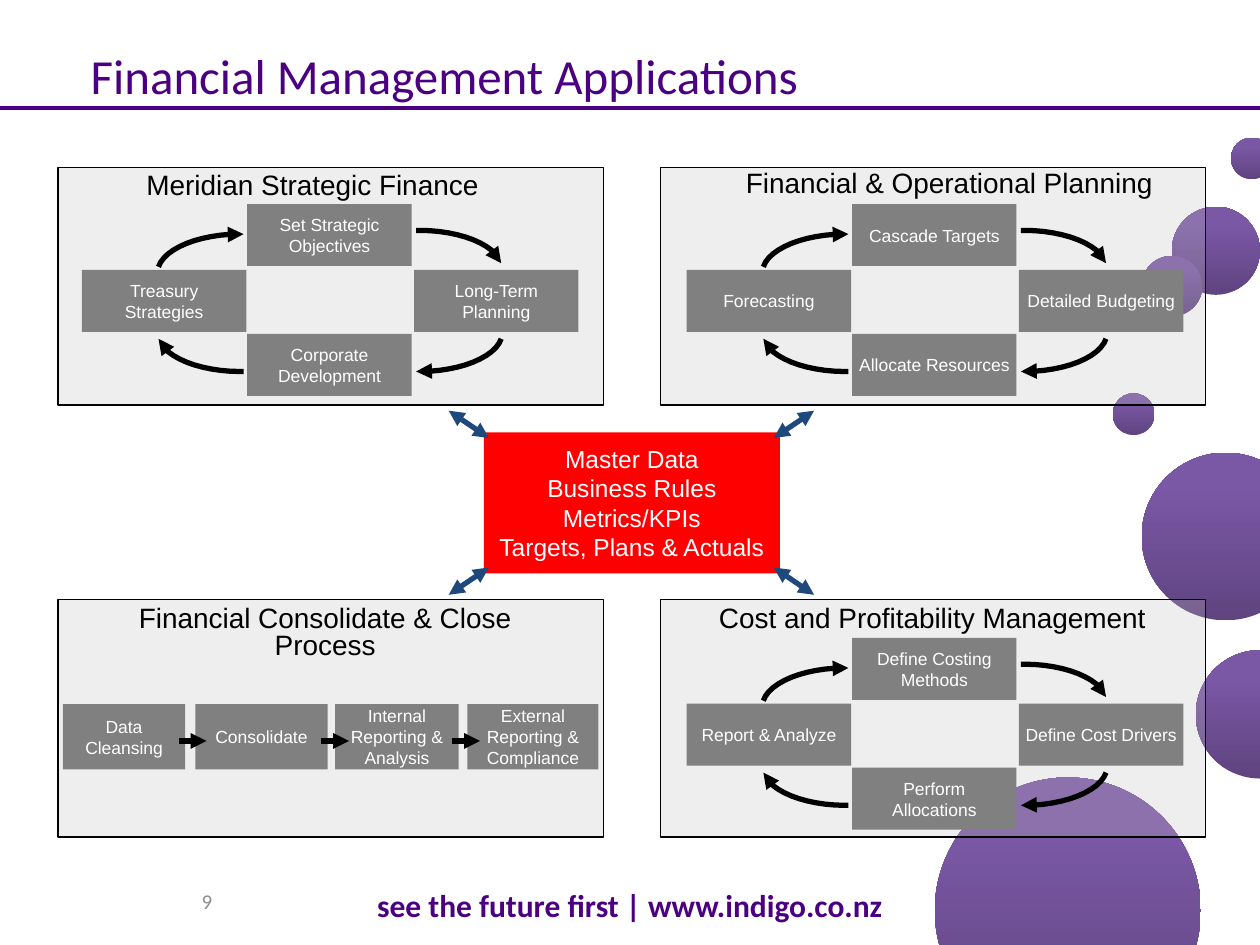
from lxml import etree
from pptx import Presentation
from pptx.dml.color import RGBColor
from pptx.enum.shapes import MSO_CONNECTOR, MSO_SHAPE
from pptx.enum.text import MSO_ANCHOR, MSO_AUTO_SIZE, PP_ALIGN
from pptx.oxml.ns import qn
from pptx.util import Pt

RECT, OVAL = MSO_SHAPE.RECTANGLE, MSO_SHAPE.OVAL
LINE = MSO_CONNECTOR.STRAIGHT
MID, TOP = MSO_ANCHOR.MIDDLE, MSO_ANCHOR.TOP
LEFT, CENTER = PP_ALIGN.LEFT, PP_ALIGN.CENTER
GROW = MSO_AUTO_SIZE.SHAPE_TO_FIT_TEXT

INDIGO = RGBColor(0x4B, 0x00, 0x82)
DARK = RGBColor(0x5F, 0x44, 0x80)
LIGHT = RGBColor(0x7B, 0x58, 0xA6)
SILVER = RGBColor(0xBF, 0xBF, 0xBF)
GRAY = RGBColor(0x80, 0x80, 0x80)
PALE = RGBColor(0x8C, 0x8C, 0x8C)
RED = RGBColor(0xFF, 0x00, 0x00)
NAVY = RGBColor(0x1F, 0x49, 0x7D)
BLACK = RGBColor(0x00, 0x00, 0x00)
WHITE = RGBColor(0xFF, 0xFF, 0xFF)

TIGHT = {"margin_" + side: Pt(3.6) for side in ("left", "top", "right", "bottom")}
CARD_W, CARD_H = 94, 35.4

# Left, top and diameter of each bubble
BUBBLES = [(652.4, 258.7, 95.8), (534.2, 444.3, 152), (669.6, 118.1, 50.4),
           (652.4, 146.2, 34.6), (683.3, 371.5, 73.4), (635.8, 224.8, 23.9),
           (703.4, 78.6, 23.9)]
# Heading with its left, top and width
HEADS = [("Meridian Strategic Finance", 52.6, 95.8, 252),
         ("Financial & Operational Planning", 410.4, 95, 264.2),
         ("Financial Consolidate & Close Process", 67.7, 343.4, 236.2),
         ("Cost and Profitability Management", 396.7, 343.4, 272.2)]
# Left, top and the top, right, bottom and left cards of each cycle
WHEELS = [(46.8, 116.6, ["Set Strategic Objectives", "Long-Term\nPlanning",
                         "Corporate\nDevelopment", "Treasury\nStrategies"]),
          (392.4, 116.6, ["Cascade Targets", "Detailed Budgeting",
                          "Allocate Resources", "Forecasting"]),
          (392.4, 364.5, ["Define Costing Methods", "Define Cost Drivers",
                          "Perform\nAllocations", "Report & Analyze"])]
SPOTS = [(94.5, 0), (189.8, 37.6), (94.5, 74.2), (0, 37.6)]
# Start, x and y direction, and the arrowhead end of each bend
BENDS = [(92.4, 17.2, -1, 1, "headEnd"), (191, 15.1, 1, 1, "tailEnd"),
         (191, 95.7, 1, -1, "headEnd"), (92.4, 95.7, -1, -1, "tailEnd")]
# Left and width of each closing step
STEPS = [("Data Cleansing", 36, 69.8), ("Consolidate", 111.6, 75.6),
         ("Internal Reporting & Analysis", 191.5, 70.6),
         ("External Reporting & Compliance", 267.1, 74.9)]


def put(item, vals):
    for name, val in vals.items():
        setattr(item, name, val)


def write(shape, text, size, color, face="Arial", bold=False,
          align=CENTER, space=None, **frame):
    body = shape.text_frame
    put(body, {"word_wrap": True, "vertical_anchor": MID, **frame})
    body.text = text
    for para in body.paragraphs:
        put(para, {"alignment": align, "line_spacing": space})
        for run in para.runs:
            put(run.font, {"size": Pt(size), "name": face, "bold": bold})
            run.font.color.rgb = color


def label(shapes, x, y, w, h, text, size, color, **form):
    box = shapes.add_textbox(Pt(x), Pt(y), Pt(w), Pt(h))
    write(box, text, size, color, **form)


def block(shapes, x, y, w, h, fill, kind=RECT):
    shape = shapes.add_shape(kind, Pt(x), Pt(y), Pt(w), Pt(h))
    shape.shadow.inherit = False
    shape.fill.solid()
    shape.fill.fore_color.rgb = fill
    shape.line.fill.background()
    return shape


def card(shapes, x, y, w, h, text):
    write(block(shapes, x, y, w, h, GRAY), text, 10, WHITE, **TIGHT)


def bubble(shapes, x, y, size):
    fill = block(shapes, x, y, size, size, DARK, OVAL).fill
    fill.gradient()
    fill.gradient_angle = 90
    for stop, color, at in zip(fill.gradient_stops, (DARK, LIGHT), (0, 0.8)):
        stop.color.rgb = color
        stop.position = at


def panel(shapes, x, y):
    shape = block(shapes, x, y, 311.8, 135.6, SILVER)
    tint = shape._element.spPr.find(qn("a:solidFill"))[0]
    etree.SubElement(tint, qn("a:alpha"), val="25000")
    shape.line.color.rgb = BLACK
    shape.line.width = Pt(0.75)


def stroke(shape, color, width, ends=()):
    shape.line.color.rgb = color
    shape.line.width = Pt(width)
    line = shape._element.spPr.find(qn("a:ln"))
    for end in ends:
        etree.SubElement(line, qn("a:" + end), type="triangle")


def link(shapes, x1, y1, x2, y2, color, width, ends=()):
    line = shapes.add_connector(LINE, Pt(x1), Pt(y1), Pt(x2), Pt(y2))
    stroke(line, color, width, ends)
    etree.SubElement(line._element.spPr, qn("a:effectLst"))


def bend(shapes, x, y, dx, dy, end):
    # Sample a cubic curve that runs level, then turns up or down
    knots = [(2, 0), (25, 0), (45, 8), (48.6, 18.7)]
    points = []
    for step in range(13):
        t = step / 12
        parts = [(1 - t) ** 3, 3 * t * (1 - t) ** 2, 3 * t * t * (1 - t), t ** 3]
        px, py = (sum(p * k[axis] for p, k in zip(parts, knots)) for axis in (0, 1))
        points.append((Pt(x + dx * px), Pt(y + dy * py)))
    path = shapes.build_freeform(Pt(x), Pt(y))
    path.add_line_segments(points, close=False)
    shape = path.convert_to_shape()
    shape.shadow.inherit = False
    shape.fill.background()
    stroke(shape, BLACK, 3, [end])


def wheel(shapes, x, y, names):
    for name, (dx, dy) in zip(names, SPOTS):
        card(shapes, x + dx, y + dy, CARD_W, CARD_H, name)
    for bx, by, dx, dy, end in BENDS:
        bend(shapes, x + bx, y + by, dx, dy, end)


def main():
    deck = Presentation()
    put(deck, {"slide_width": Pt(720), "slide_height": Pt(540)})
    slide = deck.slides.add_slide(deck.slide_layouts[5])
    shapes = slide.shapes

    # Backdrop, footer and title
    for spot in BUBBLES:
        bubble(shapes, *spot)
    label(shapes, 0, 500.4, 720, 33.8, "see the future first | www.indigo.co.nz",
          18, INDIGO, face="Calibri", bold=True)
    link(shapes, 0, 61.9, 720, 61.9, INDIGO, 2.25)
    label(shapes, 36, 500.4, 167.8, 28.8, "9", 12, PALE, face="Calibri",
          align=LEFT, margin_left=Pt(79.2))
    title = shapes.title
    put(title, {"left": Pt(44.6), "top": Pt(11.5),
                "width": Pt(596.9), "height": Pt(67.7)})
    write(title, "Financial Management Applications", 28, INDIGO,
          face="Calibri", align=LEFT, space=0.85)

    # Panels and their headings
    for y in (95.8, 342.7):
        for x in (33.1, 377.3):
            panel(shapes, x, y)
    for text, x, y, w in HEADS:
        label(shapes, x, y, w, 22.5, text, 16, BLACK, space=0.8,
              vertical_anchor=TOP, auto_size=GROW, **TIGHT)

    # Cycles
    for x, y, names in WHEELS:
        wheel(shapes, x, y, names)

    # Closing process
    for text, x, w in STEPS:
        card(shapes, x, 402.3, w, 37.4, text)
    for _, x, w in STEPS[:-1]:
        tip = x + w - 3.6
        link(shapes, tip, 423.4, tip + 15.8, 423.4, BLACK, 3, ["tailEnd"])

    # Shared data hub and its links
    hub = block(shapes, 276.5, 247, 169.2, 80.6, RED)
    write(hub, "Master Data\nBusiness Rules\nMetrics/KPIs\nTargets, Plans & Actuals",
          14, WHITE, **{**TIGHT, "word_wrap": False})
    for dx in (-1, 1):
        for dy in (-1, 1):
            link(shapes, 360.8 + 81.4 * dx, 287.3 + 37 * dy,
                 360.8 + 104.4 * dx, 287.3 + 52.6 * dy,
                 NAVY, 3, ["headEnd", "tailEnd"])

    deck.save("out.pptx")


if __name__ == "__main__":
    main()
